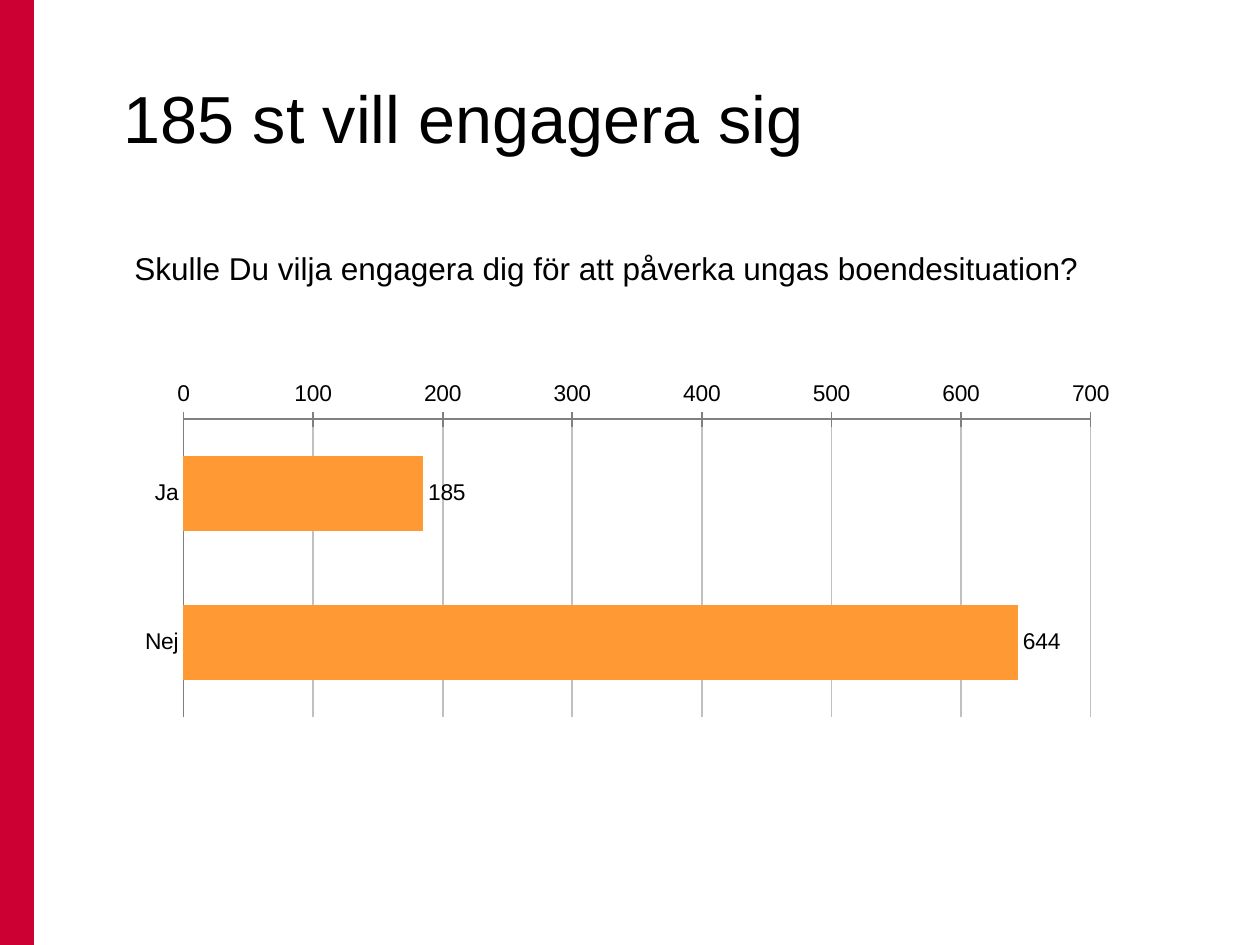
from dataclasses import dataclass

from lxml import etree
from pptx import Presentation
from pptx.chart.chart import Chart
from pptx.chart.data import CategoryChartData
from pptx.dml.color import RGBColor
from pptx.enum.chart import XL_CHART_TYPE, XL_LABEL_POSITION, XL_TICK_MARK
from pptx.enum.shapes import MSO_SHAPE
from pptx.enum.text import MSO_ANCHOR
from pptx.oxml.ns import qn
from pptx.slide import Slide
from pptx.util import Emu, Pt

PX_PER_INCH = 126
FONT = "Arial"
BLACK = RGBColor(0x00, 0x00, 0x00)
RED = RGBColor(0xCC, 0x00, 0x33)
ORANGE = RGBColor(0xFF, 0x99, 0x33)
AXIS_GREY = RGBColor(0x80, 0x80, 0x80)
GRID_GREY = RGBColor(0xC0, 0xC0, 0xC0)


def px(length: int) -> Emu:
    return Emu(round(length * 914400 / PX_PER_INCH))


@dataclass(frozen=True)
class Area:
    left: int
    top: int
    width: int
    height: int

    def emu(self) -> tuple[Emu, Emu, Emu, Emu]:
        return px(self.left), px(self.top), px(self.width), px(self.height)


@dataclass(frozen=True)
class Label:
    text: str
    area: Area
    size: int
    anchor: MSO_ANCHOR


SLIDE = Area(0, 0, 1260, 945)
SIDE_BAR = Area(0, 0, 34, 945)
CHART = Area(123, 353, 1008, 368)
LABELS = (
    Label("185 st vill engagera sig", Area(111, 38, 1057, 157), 38, MSO_ANCHOR.MIDDLE),
    Label(
        "Skulle Du vilja engagera dig för att påverka ungas boendesituation?",
        Area(122, 243, 984, 50), 18, MSO_ANCHOR.TOP,
    ),
)
ANSWERS = {"Ja": 185, "Nej": 644}
PLOT_FRACTIONS = {"x": 0.06, "y": 0.18, "w": 0.9, "h": 0.81}


def add_side_bar(page: Slide) -> None:
    bar = page.shapes.add_shape(MSO_SHAPE.RECTANGLE, *SIDE_BAR.emu())
    bar.shadow.inherit = False
    bar.fill.solid()
    bar.fill.fore_color.rgb = RED
    bar.line.fill.background()


def add_label(page: Slide, label: Label) -> None:
    box = page.shapes.add_textbox(*label.area.emu())
    frame = box.text_frame
    frame.word_wrap = True
    frame.vertical_anchor = label.anchor
    para = frame.paragraphs[0]
    para.text = label.text
    para.font.name = FONT
    para.font.size = Pt(label.size)
    para.font.color.rgb = BLACK


def place_plot(chart: Chart) -> None:
    """Fix the inner plot area as fractions of the chart."""
    plot_area = chart.element.find(f".//{qn('c:plotArea')}")
    for old_layout in plot_area.findall(qn("c:layout")):
        plot_area.remove(old_layout)
    layout = etree.Element(qn("c:layout"))
    manual = etree.SubElement(layout, qn("c:manualLayout"))
    settings = {"layoutTarget": "inner", "xMode": "edge", "yMode": "edge", **PLOT_FRACTIONS}
    for name, value in settings.items():
        etree.SubElement(manual, qn(f"c:{name}")).set("val", str(value))
    plot_area.insert(0, layout)


def add_answer_chart(page: Slide) -> None:
    data = CategoryChartData()
    data.categories = list(ANSWERS)
    data.add_series("Series 1", list(ANSWERS.values()))
    chart = page.shapes.add_chart(XL_CHART_TYPE.BAR_CLUSTERED, *CHART.emu(), data).chart
    chart.has_legend = False
    chart.has_title = False
    chart.font.name = FONT
    chart.font.size = Pt(13)
    chart.font.color.rgb = BLACK
    place_plot(chart)

    category_axis, value_axis = chart.category_axis, chart.value_axis
    category_axis.reverse_order = True
    category_axis.major_tick_mark = XL_TICK_MARK.NONE
    category_axis.has_major_gridlines = False
    value_axis.major_tick_mark = XL_TICK_MARK.CROSS
    value_axis.minimum_scale = 0
    value_axis.maximum_scale = 700
    value_axis.major_unit = 100
    value_axis.has_major_gridlines = True
    grid = value_axis.major_gridlines.format.line
    grid.color.rgb = GRID_GREY
    grid.width = Pt(1)
    for axis in (category_axis, value_axis):
        axis.format.line.color.rgb = AXIS_GREY
        axis.format.line.width = Pt(1)
        axis.tick_labels.font.size = Pt(13)

    plot = chart.plots[0]
    plot.vary_by_categories = False
    plot.gap_width = 100
    series = plot.series[0]
    series.format.fill.solid()
    series.format.fill.fore_color.rgb = ORANGE
    labels = series.data_labels
    labels.show_value = True
    labels.position = XL_LABEL_POSITION.OUTSIDE_END
    labels.font.size = Pt(13)


def main() -> None:
    deck = Presentation()
    deck.slide_width, deck.slide_height = px(SLIDE.width), px(SLIDE.height)
    page = deck.slides.add_slide(deck.slide_layouts[6])
    add_side_bar(page)
    add_answer_chart(page)
    for label in LABELS:
        add_label(page, label)
    deck.save("out.pptx")


if __name__ == "__main__":
    main()
